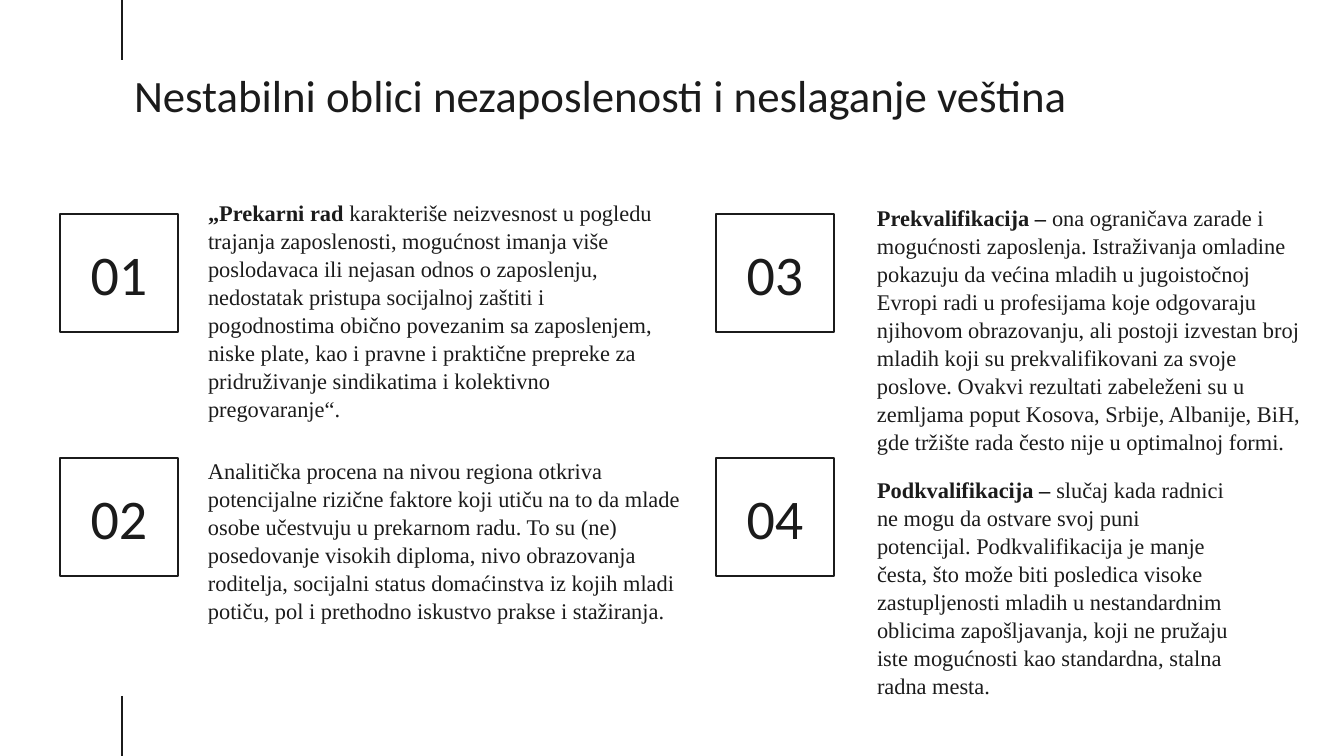
from dataclasses import dataclass

from lxml import etree
from pptx import Presentation
from pptx.dml.color import RGBColor
from pptx.enum.shapes import MSO_CONNECTOR, MSO_SHAPE
from pptx.enum.text import MSO_ANCHOR, PP_ALIGN
from pptx.oxml.ns import qn
from pptx.util import Pt

EMU_PER_PX = 914400 / 134.4
SLIDE_WIDTH, SLIDE_HEIGHT = 1344, 756
STRAIGHT = MSO_CONNECTOR.STRAIGHT
RECTANGLE = MSO_SHAPE.RECTANGLE
TOP, MIDDLE, BOTTOM = MSO_ANCHOR.TOP, MSO_ANCHOR.MIDDLE, MSO_ANCHOR.BOTTOM
LEFT, CENTER = PP_ALIGN.LEFT, PP_ALIGN.CENTER


@dataclass(frozen=True)
class Theme:
    ink: RGBColor = RGBColor(0x1B, 0x1B, 0x1B)
    background: RGBColor = RGBColor(0xFF, 0xFF, 0xFF)
    heading_font: str = "Calibri"
    body_font: str = "Times New Roman"
    title_size: int = 24
    number_size: int = 30
    body_size: int = 12
    body_spacing: float = 1.04
    line_width: float = 0.75
    inset: int = 13


THEME = Theme()

TITLE = "Nestabilni oblici nezaposlenosti i neslaganje veština"
NUMBER_SIDE = 118
COLUMNS = (60, 716)
ROWS = (214, 458)
MARGIN_LINE_X = 122
MARGIN_LINE_LENGTH = 60

# Text box (left, top, width, height), bold lead, body; ordered down each column.
TOPICS = [
    ((195, 345, 473, 90), "„Prekarni rad ",
     "karakteriše neizvesnost u pogledu trajanja zaposlenosti, mogućnost imanja "
     "više poslodavaca ili nejasan odnos o zaposlenju, nedostatak pristupa "
     "socijalnoj zaštiti i pogodnostima obično povezanim sa zaposlenjem, niske "
     "plate, kao i pravne i praktične prepreke za pridruživanje sindikatima i "
     "kolektivno pregovaranje“."),
    ((195, 550, 505, 87), "",
     "Analitička procena na nivou regiona otkriva potencijalne rizične faktore "
     "koji utiču na to da mlade osobe učestvuju u prekarnom radu. To su (ne) "
     "posedovanje visokih diploma, nivo obrazovanja roditelja, socijalni status "
     "domaćinstva iz kojih mladi potiču, pol i prethodno iskustvo prakse i "
     "stažiranja."),
    ((864, 390, 452, 78), "Prekvalifikacija – ",
     "ona ograničava zarade i mogućnosti zaposlenja. Istraživanja omladine "
     "pokazuju da većina mladih u jugoistočnoj Evropi radi u profesijama koje "
     "odgovaraju njihovom obrazovanju, ali postoji izvestan broj mladih koji su "
     "prekvalifikovani za svoje poslove. Ovakvi rezultati zabeleženi su u "
     "zemljama poput Kosova, Srbije, Albanije, BiH, gde tržište rada često nije "
     "u optimalnoj formi."),
    ((864, 634, 388, 78), "Podkvalifikacija – ",
     "slučaj kada radnici ne mogu da ostvare svoj puni potencijal. "
     "Podkvalifikacija je manje česta, što može biti posledica visoke "
     "zastupljenosti mladih u nestandardnim oblicima zapošljavanja, koji ne "
     "pružaju iste mogućnosti kao standardna, stalna radna mesta."),
]


def px(*lengths):
    return [round(length * EMU_PER_PX) for length in lengths]


def prepare_paragraph(shape, anchor, alignment, font_name, size):
    """Set up the shape's text frame and return its styled first paragraph."""
    frame = shape.text_frame
    frame.word_wrap = True
    frame.vertical_anchor = anchor
    inset, = px(THEME.inset)
    frame.margin_left = frame.margin_right = inset
    frame.margin_top = frame.margin_bottom = inset
    paragraph = frame.paragraphs[0]
    paragraph.alignment = alignment
    paragraph.font.name = font_name
    paragraph.font.size = Pt(size)
    paragraph.font.color.rgb = THEME.ink
    return paragraph


def add_margin_line(slide, top, bottom):
    line = slide.shapes.add_connector(
        STRAIGHT, *px(MARGIN_LINE_X, top, MARGIN_LINE_X, bottom))
    line.line.color.rgb = THEME.ink
    line.line.width = Pt(THEME.line_width)
    etree.SubElement(line._element.spPr, qn("a:effectLst"))


def add_title(slide):
    box = slide.shapes.add_textbox(*px(121, 55, 1223, 87))
    paragraph = prepare_paragraph(
        box, TOP, LEFT, THEME.heading_font, THEME.title_size)
    paragraph.add_run().text = TITLE


def add_number(slide, left, top, number):
    square = slide.shapes.add_shape(
        RECTANGLE, *px(left, top, NUMBER_SIDE, NUMBER_SIDE))
    square.shadow.inherit = False
    square.fill.background()
    square.line.color.rgb = THEME.ink
    square.line.width = Pt(THEME.line_width)
    paragraph = prepare_paragraph(
        square, MIDDLE, CENTER, THEME.heading_font, THEME.number_size)
    paragraph.add_run().text = f"{number:02d}"


def add_description(slide, bounds, lead, body):
    """Add bottom-anchored text that grows upwards, with an optional bold lead."""
    box = slide.shapes.add_textbox(*px(*bounds))
    paragraph = prepare_paragraph(
        box, BOTTOM, LEFT, THEME.body_font, THEME.body_size)
    paragraph.line_spacing = THEME.body_spacing
    if lead:
        run = paragraph.add_run()
        run.text = lead
        run.font.bold = True
    paragraph.add_run().text = body


def main():
    presentation = Presentation()
    presentation.slide_width, presentation.slide_height = px(
        SLIDE_WIDTH, SLIDE_HEIGHT)
    slide = presentation.slides.add_slide(presentation.slide_layouts[6])
    slide.background.fill.solid()
    slide.background.fill.fore_color.rgb = THEME.background

    add_margin_line(slide, 0, MARGIN_LINE_LENGTH)
    add_margin_line(slide, SLIDE_HEIGHT - MARGIN_LINE_LENGTH, SLIDE_HEIGHT)
    add_title(slide)
    for index, (bounds, lead, body) in enumerate(TOPICS):
        column, row = divmod(index, len(ROWS))
        add_number(slide, COLUMNS[column], ROWS[row], index + 1)
        add_description(slide, bounds, lead, body)
    presentation.save("out.pptx")


if __name__ == "__main__":
    main()
